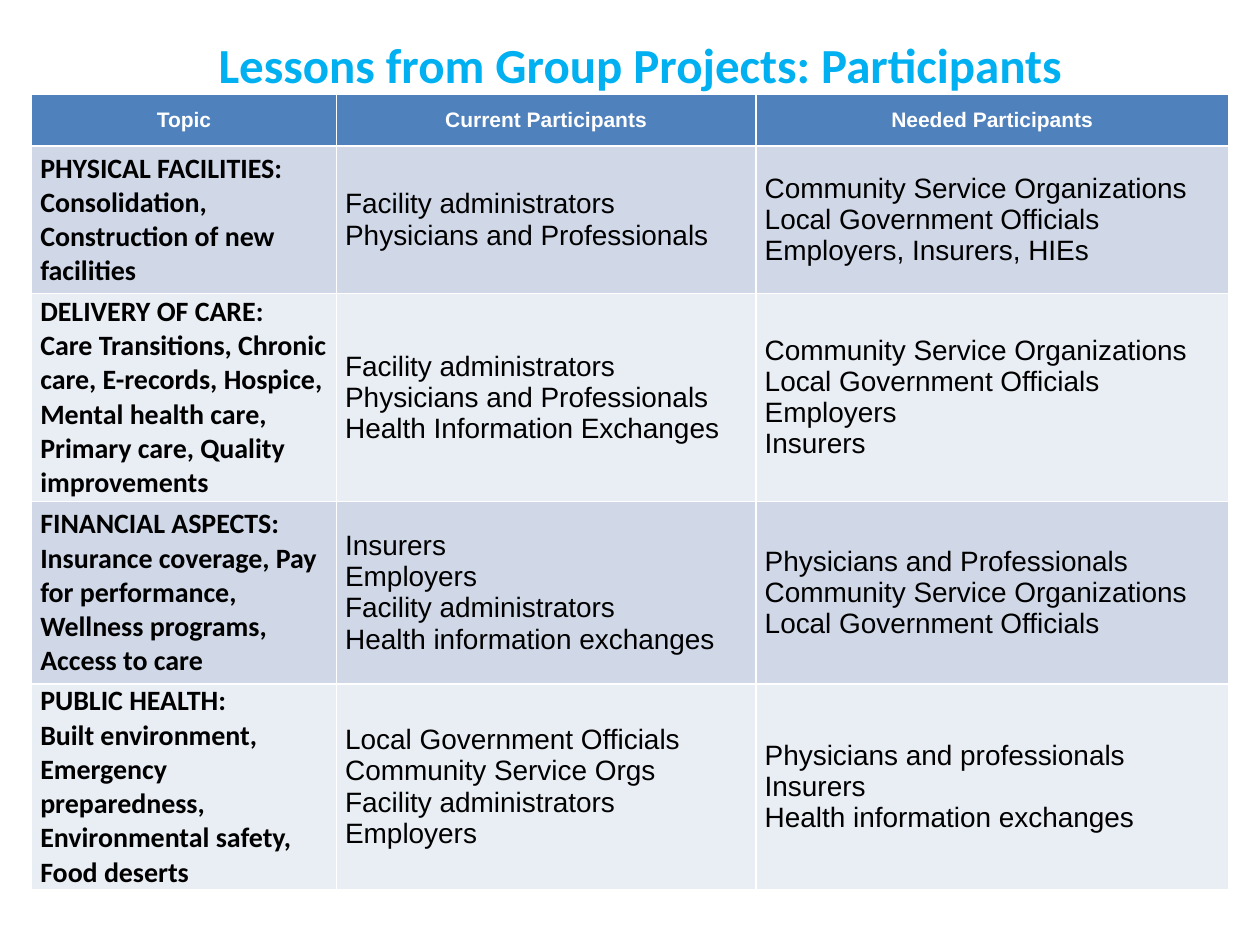
from pptx import Presentation
from pptx.dml.color import RGBColor
from pptx.enum.text import MSO_ANCHOR, MSO_AUTO_SIZE, PP_ALIGN
from pptx.util import Inches, Pt

COLORS = {
    "title": "00B0F0",
    "header": "4F81BD",
    "header_text": "FFFFFF",
    "text": "000000",
    "odd_row": "D0D8E8",
    "even_row": "E9EDF4",
}
COLUMN_WIDTHS = [2.42, 3.33, 3.75]
ROW_HEIGHTS = [0.41, 1.17, 1.65, 1.45, 1.63]
HEADERS = ["Topic", "Current Participants", "Needed Participants"]
TOPICS = [
    [
        "PHYSICAL FACILITIES: Consolidation, Construction of new facilities",
        "Facility administrators\nPhysicians and Professionals",
        "Community Service Organizations\nLocal Government Officials\n"
        "Employers, Insurers, HIEs",
    ],
    [
        "DELIVERY OF CARE:\nCare Transitions, Chronic care, E-records, Hospice, "
        "Mental health care, Primary care, Quality improvements",
        "Facility administrators\nPhysicians and Professionals\n"
        "Health Information Exchanges",
        "Community Service Organizations\nLocal Government Officials\n"
        "Employers\nInsurers",
    ],
    [
        "FINANCIAL ASPECTS:\nInsurance coverage, Pay for performance, "
        "Wellness programs, Access to care",
        "Insurers\nEmployers\nFacility administrators\nHealth information exchanges",
        "Physicians and Professionals\nCommunity Service Organizations\n"
        "Local Government Officials",
    ],
    [
        "PUBLIC HEALTH:\nBuilt environment, Emergency preparedness, "
        "Environmental safety, Food deserts",
        "Local Government Officials\nCommunity Service Orgs\n"
        "Facility administrators\nEmployers",
        "Physicians and professionals\nInsurers\nHealth information exchanges",
    ],
]


def format_paragraph(paragraph, font_name, size, color, bold, alignment):
    paragraph.alignment = alignment
    for run in paragraph.runs:
        run.font.name = font_name
        run.font.size = Pt(size)
        run.font.bold = bold
        run.font.color.rgb = RGBColor.from_string(COLORS[color])


def place_title(slide, left, top, width, height):
    title = slide.shapes.title
    title.left, title.top = Inches(left), Inches(top)
    title.width, title.height = Inches(width), Inches(height)
    text_frame = title.text_frame
    text_frame.text = "Lessons from Group Projects: Participants"
    text_frame.auto_size = MSO_AUTO_SIZE.NONE
    text_frame.vertical_anchor = MSO_ANCHOR.MIDDLE
    paragraph = text_frame.paragraphs[0]
    paragraph.line_spacing = Pt(40)
    format_paragraph(paragraph, "Calibri", 28, "title", True, PP_ALIGN.CENTER)


def fill_cell(cell, text, fill, font_name, size, color, bold, alignment):
    cell.fill.solid()
    cell.fill.fore_color.rgb = RGBColor.from_string(COLORS[fill])
    cell.vertical_anchor = MSO_ANCHOR.MIDDLE
    cell.margin_left = cell.margin_right = Inches(0.07)
    cell.margin_top = cell.margin_bottom = 0
    cell.text_frame.text = text
    for paragraph in cell.text_frame.paragraphs:
        format_paragraph(paragraph, font_name, size, color, bold, alignment)


def place_participants_table(slide, left, top):
    table = slide.shapes.add_table(
        len(ROW_HEIGHTS), len(COLUMN_WIDTHS), Inches(left), Inches(top),
        Inches(sum(COLUMN_WIDTHS)), Inches(sum(ROW_HEIGHTS)),
    ).table
    for column, width in zip(table.columns, COLUMN_WIDTHS):
        column.width = Inches(width)
    for row, height in zip(table.rows, ROW_HEIGHTS):
        row.height = Inches(height)

    for column_index, header in enumerate(HEADERS):
        fill_cell(table.cell(0, column_index), header, "header",
                  "Arial", 12, "header_text", True, PP_ALIGN.CENTER)
    for row_index, texts in enumerate(TOPICS, start=1):
        fill = "odd_row" if row_index % 2 else "even_row"
        for column_index, text in enumerate(texts):
            is_topic = column_index == 0
            fill_cell(table.cell(row_index, column_index), text, fill,
                      "Calibri" if is_topic else "Arial", 16, "text",
                      is_topic, PP_ALIGN.LEFT)


def main():
    presentation = Presentation()
    presentation.slide_width = Inches(10)
    presentation.slide_height = Inches(7.5)
    slide = presentation.slides.add_slide(presentation.slide_layouts[5])
    place_title(slide, 0.58, 0.25, 9, 0.42)
    place_participants_table(slide, 0.25, 0.75)
    presentation.save("out.pptx")


if __name__ == "__main__":
    main()
